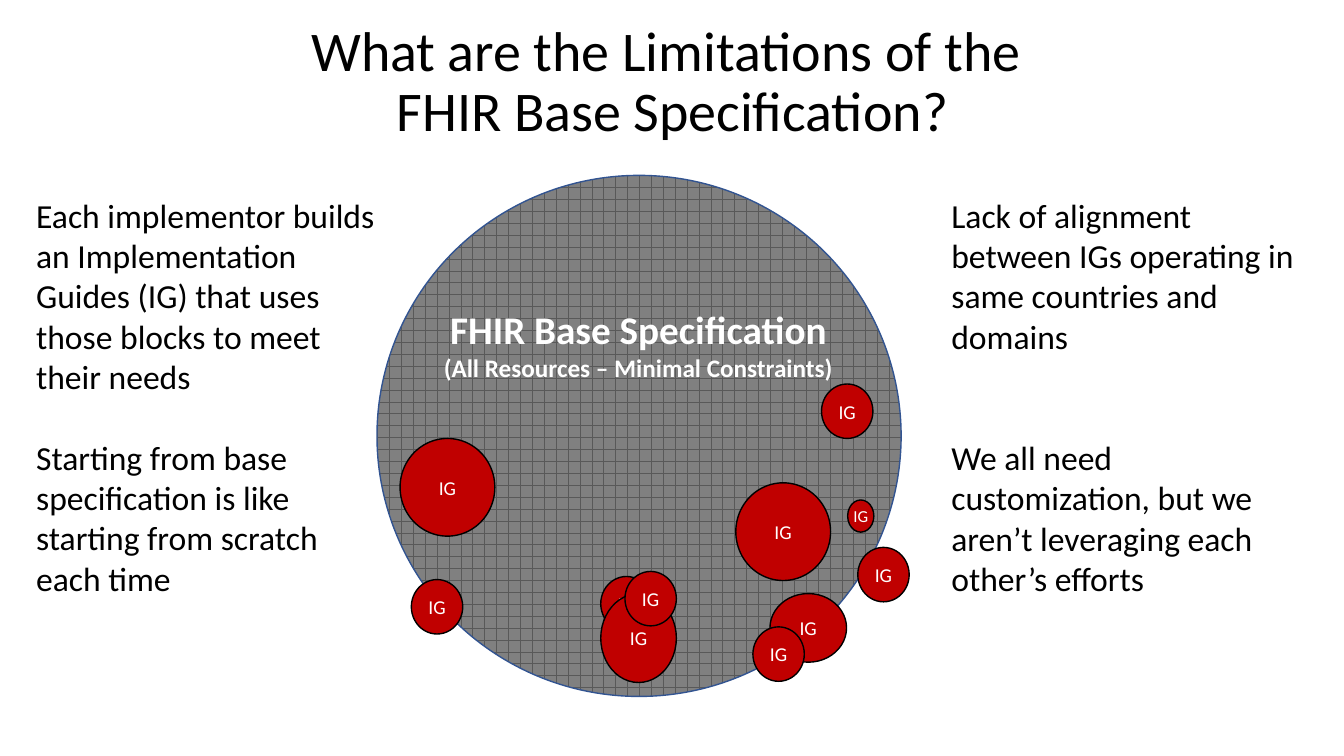
from dataclasses import dataclass
from typing import Any

from pptx import Presentation
from pptx.dml.color import RGBColor
from pptx.enum.dml import MSO_PATTERN as Pattern
from pptx.enum.shapes import MSO_SHAPE as Shape
from pptx.enum.text import MSO_ANCHOR as Anchor, MSO_AUTO_SIZE as AutoSize, PP_ALIGN as Align
from pptx.util import Pt


def color(hex_code):
    return RGBColor.from_string(hex_code)


@dataclass
class SlideBuilder:
    """Holds the slide style and draws each kind of element on the page."""
    page: Any
    font: str = "Calibri"
    ink: str = "000000"
    light: str = "FFFFFF"
    guide_red: str = "C00000"

    def style(self, para, size, hex_code, align=Align.LEFT, bold=False):
        para.alignment = align
        for span in para.runs:
            span.font.name = self.font
            span.font.size = Pt(size)
            span.font.bold = bold
            span.font.color.rgb = color(hex_code)

    def title(self, text, left, top, width, height):
        box = self.page.shapes.title
        box.left, box.top, box.width, box.height = map(Pt, (left, top, width, height))
        frame = box.text_frame
        frame.text = text
        frame.auto_size = AutoSize.NONE
        frame.vertical_anchor = Anchor.MIDDLE
        frame.paragraphs[0].line_spacing = 0.9
        self.style(frame.paragraphs[0], 40, self.ink, Align.CENTER)

    def text_box(self, lines, left, top, width, height, sizes, hex_code,
                 align=Align.LEFT, bold=False, gap=0):
        box = self.page.shapes.add_textbox(*map(Pt, (left, top, width, height)))
        frame = box.text_frame
        frame.word_wrap = True
        frame.text = "\n".join(lines)
        for para, size in zip(frame.paragraphs, sizes):
            self.style(para, size, hex_code, align, bold)
        frame.paragraphs[-1].space_before = Pt(gap)

    def circle(self, left, top, width, height, outline):
        disc = self.page.shapes.add_shape(
            Shape.FLOWCHART_CONNECTOR, *map(Pt, (left, top, width, height)))
        disc.shadow.inherit = False
        disc.line.color.rgb = color(outline)
        disc.line.width = Pt(1)
        return disc

    def base_circle(self, left, top, width, height):
        fill = self.circle(left, top, width, height, "325491").fill
        fill.patterned()
        fill.pattern = Pattern.HORIZONTAL_BRICK
        fill.fore_color.rgb = color("595959")
        fill.back_color.rgb = color("808080")

    def guide(self, left, top, width, height, size=14):
        disc = self.circle(left, top, width, height, self.ink)
        disc.fill.solid()
        disc.fill.fore_color.rgb = color(self.guide_red)
        frame = disc.text_frame
        frame.margin_left = frame.margin_right = frame.margin_top = frame.margin_bottom = 0
        frame.vertical_anchor = Anchor.MIDDLE
        frame.text = "IG"
        self.style(frame.paragraphs[0], size, self.light, Align.CENTER)


def main():
    deck = Presentation()
    deck.slide_width, deck.slide_height = Pt(960), Pt(540)
    slide = SlideBuilder(deck.slides.add_slide(deck.slide_layouts[5]))

    slide.title("What are the Limitations of the \vFHIR Base Specification?",
                6.5, 7.2, 947.5, 104.4)
    slide.base_circle(269.3, 125.3, 374.4, 372.2)
    slide.text_box(["FHIR Base Specification", "(All Resources – Minimal Constraints)"],
                   298, 214.6, 316, 97, (28, 18), slide.light, Align.CENTER, bold=True)

    large, small = (67.7, 69.8), (36.7, 38.9)
    slide.guide(525.6, 344.9, *large)
    slide.guide(550, 424, 54.7, 49)
    slide.guide(605.5, 357.1, 18.7, 23, size=12)
    slide.guide(429.1, 411.8, *small)
    slide.guide(429.1, 424.1, 54, 63.4)
    slide.guide(285.8, 313.2, *large)
    for left, top in ((612.7, 391), (446.4, 408.2), (537.8, 447.8),
                      (586.8, 274.3), (293.8, 414)):
        slide.guide(left, top, *small)

    blank_line = 29
    slide.text_box(["Lack of alignment between IGs operating in same countries and domains",
                    "We all need customization, but we aren’t leveraging each other’s efforts"],
                   672.5, 135.4, 260, 298, (24, 24), slide.ink, gap=2 * blank_line)
    slide.text_box(["Each implementor builds an Implementation Guides (IG) that uses "
                    "those blocks to meet their needs",
                    "Starting from base specification is like starting from scratch each time"],
                   18.7, 135.4, 260.6, 327, (24, 24), slide.ink, gap=blank_line)

    deck.save("out.pptx")


if __name__ == "__main__":
    main()
